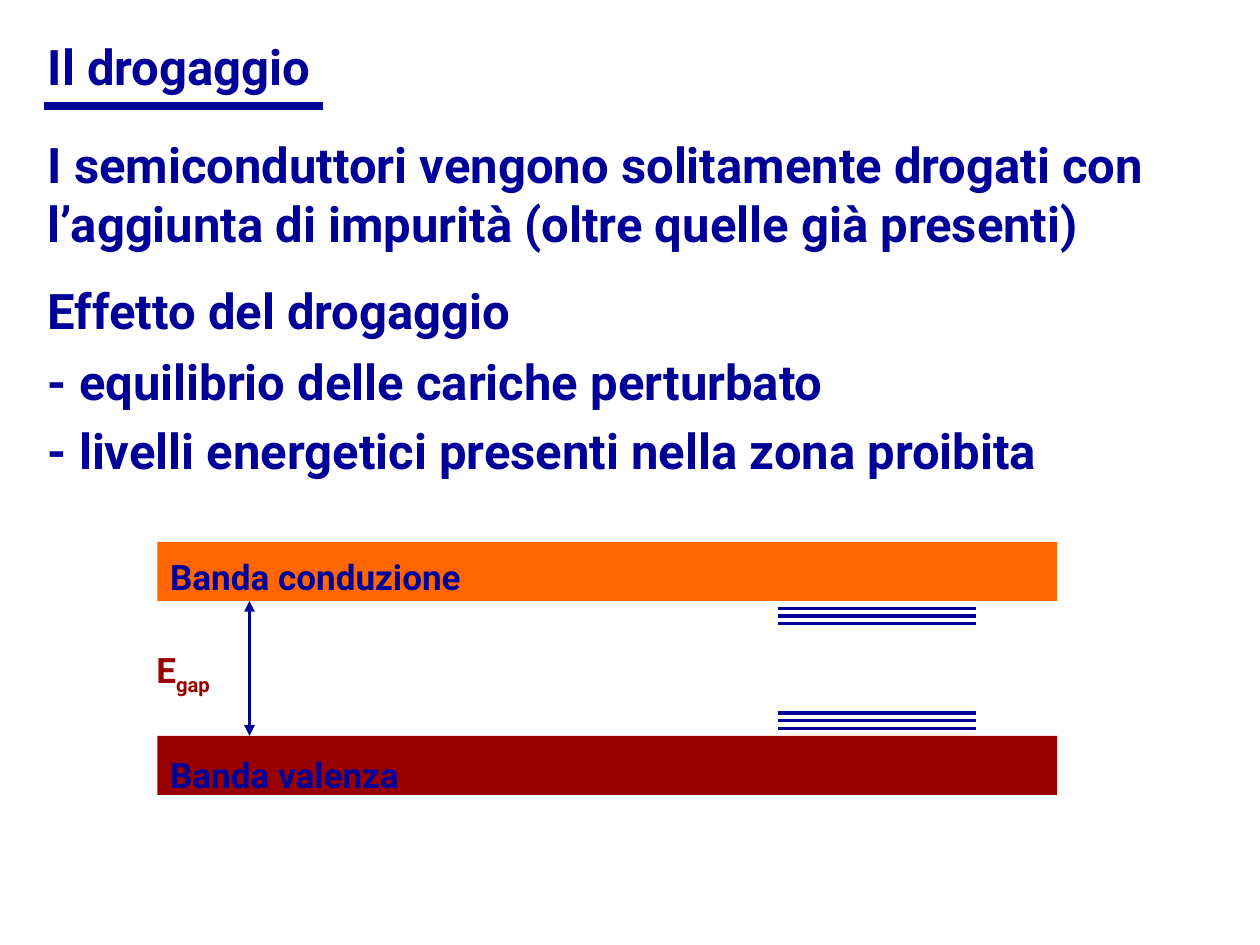
from collections import namedtuple
from dataclasses import dataclass

from lxml import etree
from pptx import Presentation
from pptx.dml.color import RGBColor
from pptx.enum.shapes import MSO_CONNECTOR, MSO_SHAPE
from pptx.enum.text import MSO_ANCHOR, PP_ALIGN
from pptx.oxml.ns import qn
from pptx.util import Inches, Pt

STRAIGHT = MSO_CONNECTOR.STRAIGHT
RECTANGLE = MSO_SHAPE.RECTANGLE
TOP, MIDDLE = MSO_ANCHOR.TOP, MSO_ANCHOR.MIDDLE
LEFT = PP_ALIGN.LEFT
TITLE_ONLY = 5

Box = namedtuple("Box", "left top width height")


@dataclass(frozen=True)
class Theme:
    ink: RGBColor = RGBColor(0x00, 0x00, 0x99)
    conduction: RGBColor = RGBColor(0xFF, 0x66, 0x00)
    valence: RGBColor = RGBColor(0x99, 0x00, 0x00)
    font: str = "Roboto"
    heading: int = 28
    label: int = 20
    rule: float = 4.5
    thin: float = 2


THEME = Theme()
TITLE_BOX = Box(0.33, 0.21, 9.35, 0.63)
BODY_BOX = Box(0.33, 1.02, 9.35, 3.02)
DIAGRAM_BOX = Box(1.25, 4.3, 7.14, 2.01)


def inches(box):
    return [Inches(value) for value in box]


def prepare_frame(shape, anchor=TOP):
    frame = shape.text_frame
    frame.word_wrap = True
    frame.vertical_anchor = anchor
    frame.margin_left = frame.margin_right = Inches(0.05)
    frame.margin_top = frame.margin_bottom = Inches(0.05)
    return frame


def style(para, size, color=THEME.ink, before=0, spacing=1.0):
    para.alignment = LEFT
    para.space_before = Pt(before)
    para.line_spacing = spacing
    font = para.font
    font.name, font.size, font.bold = THEME.font, Pt(size), True
    font.color.rgb = color


def add_line(shapes, start, end, width=THEME.thin, arrows=False):
    line = shapes.add_connector(STRAIGHT, *inches(start + end))
    line.line.color.rgb = THEME.ink
    line.line.width = Pt(width)
    if arrows:
        outline = line.line._get_or_add_ln()
        for tip in ("a:headEnd", "a:tailEnd"):
            etree.SubElement(outline, qn(tip), type="triangle")
    etree.SubElement(line._element.spPr, qn("a:effectLst"))


def add_label(shapes, box, text, color=THEME.ink, subscript=""):
    frame = prepare_frame(shapes.add_textbox(*inches(box)))
    para = frame.paragraphs[0]
    para.add_run().text = text
    if subscript:
        span = para.add_run()
        span.text = subscript
        span._r.get_or_add_rPr().set("baseline", "-25000")
    style(para, THEME.label, color, before=12)


def add_title(page, box):
    title = page.shapes.title
    title.left, title.top, title.width, title.height = inches(box)
    frame = prepare_frame(title, MIDDLE)
    frame.text = "Il drogaggio"
    style(frame.paragraphs[0], THEME.heading)
    left, bottom = box.left + 0.02, box.top + box.height
    add_line(page.shapes, (left, bottom), (left + 2.21, bottom), THEME.rule)


def add_body(page, box):
    lines = [
        ("I semiconduttori vengono solitamente drogati con "
         "l’aggiunta di impurità (oltre quelle già presenti)", 1.0),
        ("Effetto del drogaggio", 1.0),
        ("- equilibrio delle cariche perturbato", 0.7),
        ("- livelli energetici presenti nella zona proibita", 0.7),
    ]
    frame = prepare_frame(page.shapes.add_textbox(*inches(box)))
    frame.text = "\n".join(text for text, _ in lines)
    for para, (_, spacing) in zip(frame.paragraphs, lines):
        style(para, THEME.heading, before=16, spacing=spacing)


def add_band(shapes, box, color, text, label_drop):
    band = shapes.add_shape(RECTANGLE, *inches(box))
    band.shadow.inherit = False
    band.fill.solid()
    band.fill.fore_color.rgb = color
    band.line.fill.background()
    label_box = Box(box.left + 0.05, box.top + label_drop, 3.89, 0.43)
    add_label(shapes, label_box, text)


def add_levels(shapes, left, right, edge, step):
    """Three energy levels, stepping away from a band edge."""
    for rank in (1, 2, 3):
        height = edge + rank * step
        add_line(shapes, (left, height), (right, height))


def add_band_diagram(page, box):
    shapes = page.shapes.add_group_shape().shapes
    band_height = 0.47
    gap_top = box.top + band_height
    gap_bottom = box.top + box.height - band_height

    add_band(shapes, Box(box.left, box.top, box.width, band_height),
             THEME.conduction, "Banda conduzione", 0.06)
    add_band(shapes, Box(box.left, gap_bottom, box.width, band_height),
             THEME.valence, "Banda valenza", 0.09)

    arrow_x = box.left + 0.73
    add_line(shapes, (arrow_x, gap_top), (arrow_x, gap_bottom), arrows=True)
    add_label(shapes, Box(box.left - 0.06, gap_top + 0.33, 0.95, 0.49),
              "E", THEME.valence, subscript="gap")

    left = box.left + 0.69 * box.width
    right = left + 0.22 * box.width
    add_levels(shapes, left, right, gap_top, 0.06)
    add_levels(shapes, left, right, gap_bottom, -0.06)


def main():
    deck = Presentation()
    deck.slide_width, deck.slide_height = Inches(10), Inches(7.5)
    page = deck.slides.add_slide(deck.slide_layouts[TITLE_ONLY])
    add_title(page, TITLE_BOX)
    add_body(page, BODY_BOX)
    add_band_diagram(page, DIAGRAM_BOX)
    deck.save("out.pptx")


if __name__ == "__main__":
    main()
